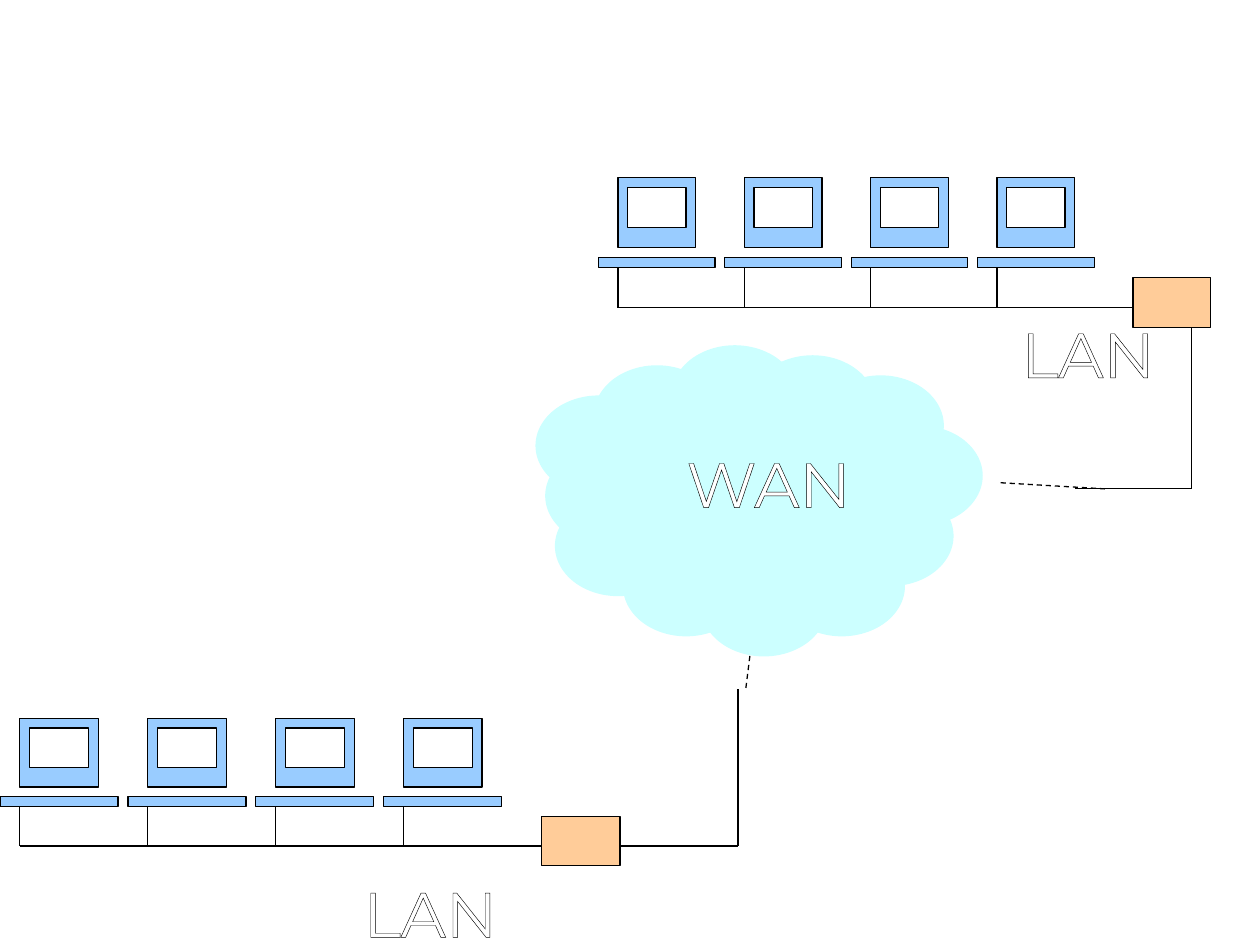
from lxml.etree import SubElement
from pptx import Presentation
from pptx.dml.color import RGBColor
from pptx.enum.dml import MSO_LINE
from pptx.enum.shapes import MSO_CONNECTOR, MSO_SHAPE
from pptx.enum.text import MSO_ANCHOR, PP_ALIGN
from pptx.oxml.ns import qn
from pptx.util import Inches, Pt

COLORS = {
    "computer": "99CCFF",
    "screen": "FFFFFF",
    "router": "FFCC99",
    "cloud": "CCFFFF",
    "label": "FFFFFF",
    "line": "000000",
}
LAN_UNITS = (31.5, 15)
CLOUD_UNITS = (23, 31)
COMPUTER_COUNT = 4
COMPUTER_PITCH = 6.5
BUS_Y = 13
PUFF_SIZE = (6.5, 10)
PUFFS = [
    (7, 0), (3, 2), (0, 5), (1, 15), (4.5, 19), (8.5, 21),
    (12.5, 19), (15, 14), (16.5, 8), (14.5, 3), (11, 1), (0.5, 10),
]


def color(name):
    """Return the named colour."""
    return RGBColor.from_string(COLORS[name])


def unit_grid(box, units):
    """Return a function that turns grid units in the box into slide inches."""
    left, top, width, height = box
    columns, rows = units
    return lambda x, y: (left + x * width / columns, top + y * height / rows)


def add_part(shapes, grid, kind, place, fill, outlined=True):
    """Draw one filled shape at a place given in grid units."""
    x, y, width, height = place
    left, top = grid(x, y)
    right, bottom = grid(x + width, y + height)
    part = shapes.add_shape(
        kind, Inches(left), Inches(top), Inches(right - left), Inches(bottom - top)
    )
    part.shadow.inherit = False
    part.fill.solid()
    part.fill.fore_color.rgb = color(fill)
    if outlined:
        part.line.color.rgb = color("line")
        part.line.width = Pt(0.75)
    else:
        part.line.fill.background()


def add_wire(shapes, start, end, dashed=False):
    """Draw a straight wire between two points in inches."""
    wire = shapes.add_connector(
        MSO_CONNECTOR.STRAIGHT, *(Inches(value) for value in (*start, *end))
    )
    wire.line.color.rgb = color("line")
    wire.line.width = Pt(0.75)
    if dashed:
        wire.line.dash_style = MSO_LINE.DASH
    SubElement(wire._element.spPr, qn("a:effectLst"))


def add_text(slide, box, text, size=36, font="Montserrat", fill="label", outline="line"):
    """Add a centred label with outlined letters."""
    label = slide.shapes.add_textbox(*(Inches(value) for value in box))
    frame = label.text_frame
    frame.word_wrap = False
    frame.margin_left = frame.margin_right = 0
    frame.vertical_anchor = MSO_ANCHOR.TOP
    paragraph = frame.paragraphs[0]
    paragraph.alignment = PP_ALIGN.CENTER
    run = paragraph.add_run()
    run.text = text
    run.font.size = Pt(size)
    run.font.name = font
    run.font.color.rgb = color(fill)
    properties = run.font._element
    letter_line = SubElement(properties, qn("a:ln"), w=str(Pt(0.75)))
    solid = SubElement(letter_line, qn("a:solidFill"))
    SubElement(solid, qn("a:srgbClr"), val=COLORS[outline])
    properties.insert(0, letter_line)


def add_lan(slide, box, uplink):
    """Draw computers on a bus, their router and the uplink given in grid units."""
    shapes = slide.shapes.add_group_shape().shapes
    grid = unit_grid(box, LAN_UNITS)
    offsets = [index * COMPUTER_PITCH for index in range(COMPUTER_COUNT)]
    for x in offsets:
        add_part(shapes, grid, MSO_SHAPE.RECTANGLE, (x + 1, 0, 4, 7), "computer")
        add_part(shapes, grid, MSO_SHAPE.RECTANGLE, (x, 8, 6, 1), "computer")
        add_part(shapes, grid, MSO_SHAPE.RECTANGLE, (x + 1.5, 1, 3, 4), "screen")
    for x in offsets:
        add_wire(shapes, grid(x + 1, 9), grid(x + 1, BUS_Y))
    add_wire(shapes, grid(1, BUS_Y), grid(27.5, BUS_Y))
    add_part(shapes, grid, MSO_SHAPE.RECTANGLE, (27.5, 10, 4, 5), "router")
    for start, end in zip(uplink, uplink[1:]):
        add_wire(shapes, grid(*start), grid(*end))


def add_cloud(slide, box):
    """Draw the WAN cloud as a ring of puffs around a core."""
    shapes = slide.shapes.add_group_shape().shapes
    grid = unit_grid(box, CLOUD_UNITS)
    for place in [(*puff, *PUFF_SIZE) for puff in PUFFS] + [(4, 7, 15.5, 16)]:
        add_part(shapes, grid, MSO_SHAPE.OVAL, place, "cloud", outlined=False)


def main():
    """Build the network slide and save it."""
    presentation = Presentation()
    presentation.slide_width = Inches(10)
    presentation.slide_height = Inches(7.5)
    slide = presentation.slides.add_slide(presentation.slide_layouts[6])

    add_lan(slide, (4.75, 1.41, 4.86, 1.19), [(30.5, 15), (30.5, 31.1), (24.5, 31.1)])
    add_wire(slide.shapes, (5.92, 5.46), (5.97, 5.06), dashed=True)
    add_wire(slide.shapes, (8.77, 3.88), (7.92, 3.83), dashed=True)
    add_cloud(slide, (4.25, 2.74, 3.55, 2.47))
    add_text(slide, (5.25, 3.48, 1.7, 0.56), "WAN")
    add_text(slide, (2.84, 6.89, 1.15, 0.34), "LAN")
    add_text(slide, (8.06, 2.45, 1.15, 0.34), "LAN")
    add_lan(slide, (0, 5.7, 4.92, 1.17), [(31.5, 13), (37.5, 13), (37.5, -3)])

    presentation.save("out.pptx")


if __name__ == "__main__":
    main()
